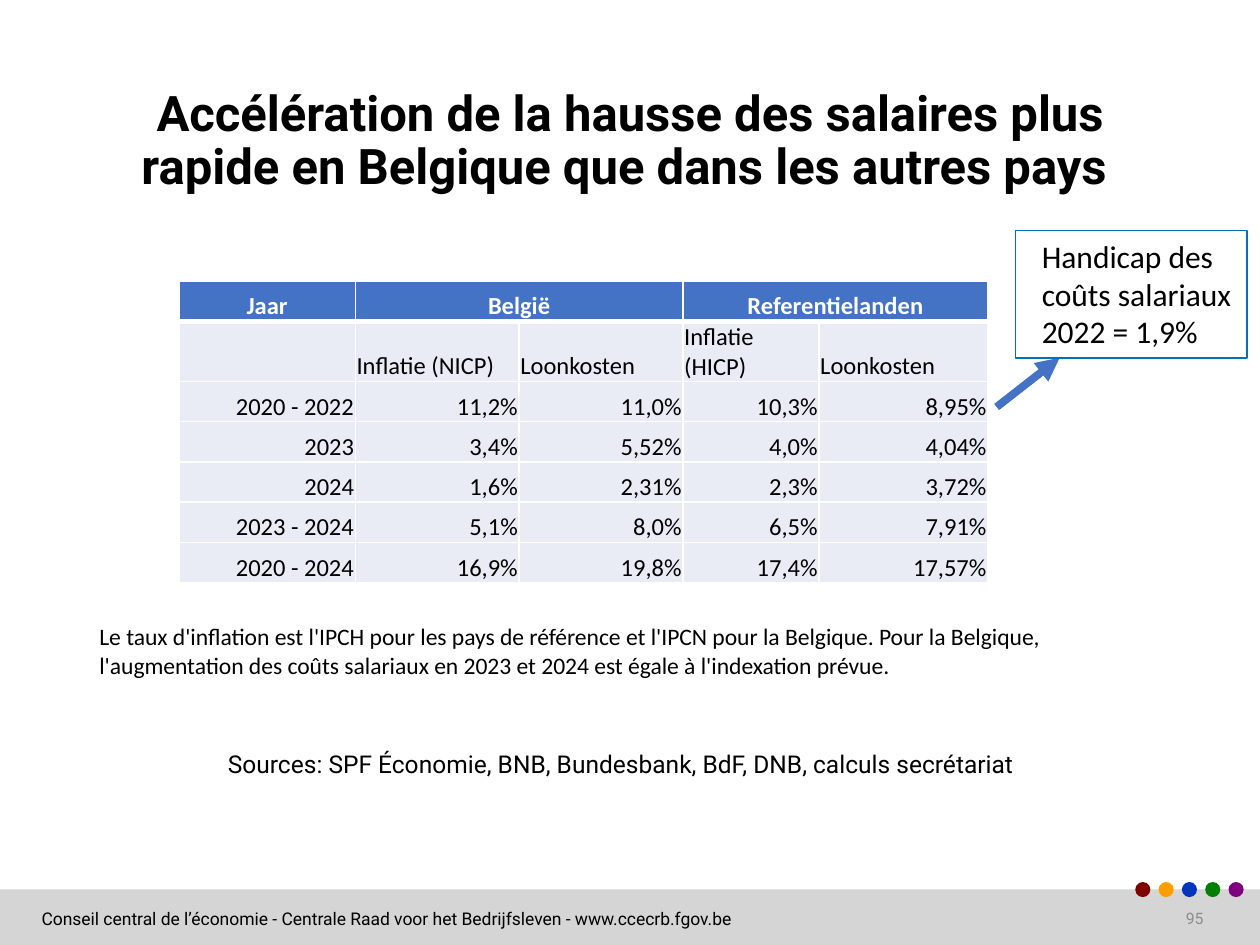
from lxml import etree
from pptx import Presentation
from pptx.dml.color import RGBColor
from pptx.enum.shapes import MSO_CONNECTOR, MSO_SHAPE
from pptx.enum.text import MSO_ANCHOR as ANCHOR, PP_ALIGN as ALIGN
from pptx.oxml.ns import qn
from pptx.util import Inches, Pt

BLACK = RGBColor(0x00, 0x00, 0x00)
WHITE = RGBColor(0xFF, 0xFF, 0xFF)
BLUE = RGBColor(0x44, 0x72, 0xC4)
FRAME_BLUE = RGBColor(0x00, 0x70, 0xC0)
PALE = RGBColor(0xE9, 0xEB, 0xF5)
BAND_GREY = RGBColor(0xD6, 0xD5, 0xD5)
NUMBER_GREY = RGBColor(0x8C, 0x8C, 0x8C)
DOT_COLORS = [RGBColor(0x7F, 0x00, 0x00), RGBColor(0xFF, 0x9D, 0x00),
              RGBColor(0x00, 0x35, 0xBC), RGBColor(0x00, 0x7F, 0x00),
              RGBColor(0x7F, 0x00, 0x7F)]

COL_WIDTHS = [1.4, 1.3, 1.3, 1.08, 1.34]
ROW_HEIGHT = 0.32
ROWS = [
    ["Jaar", "België", "", "Referentielanden", ""],
    ["", "Inflatie (NICP)", "Loonkosten", "Inflatie (HICP)", "Loonkosten"],
    ["2020 - 2022", "11,2%", "11,0%", "10,3%", "8,95%"],
    ["2023", "3,4%", "5,52%", "4,0%", "4,04%"],
    ["2024", "1,6%", "2,31%", "2,3%", "3,72%"],
    ["2023 - 2024", "5,1%", "8,0%", "6,5%", "7,91%"],
    ["2020 - 2024", "16,9%", "19,8%", "17,4%", "17,57%"],
]


def write(tf, text, size=14, font="Calibri", color=BLACK, bold=False,
          align=ALIGN.LEFT, spacing=None):
    p = tf.paragraphs[0]
    p.alignment = align
    if spacing:
        p.line_spacing = spacing
    p.font.size = Pt(size)
    if text:
        r = p.add_run()
        r.text = text
        r.font.size, r.font.name, r.font.bold = Pt(size), font, bold
        r.font.color.rgb = color


def add_text(s, box, text, anchor=ANCHOR.TOP, wrap=True, inset=None, **fmt):
    tf = s.shapes.add_textbox(*map(Inches, box)).text_frame
    tf.word_wrap = wrap
    tf.vertical_anchor = anchor
    if inset is not None:
        tf.margin_left = tf.margin_right = Inches(inset)
        tf.margin_top = tf.margin_bottom = Inches(inset)
    write(tf, text, **fmt)


def add_shape(s, kind, box, fill=None, line=None):
    sp = s.shapes.add_shape(kind, *map(Inches, box))
    sp.shadow.inherit = False
    if fill is None:
        sp.fill.background()
    else:
        sp.fill.solid()
        sp.fill.fore_color.rgb = fill
    if line is None:
        sp.line.fill.background()
    else:
        sp.line.color.rgb = line
        sp.line.width = Pt(1)


def add_arrow(s, start, end):
    c = s.shapes.add_connector(MSO_CONNECTOR.STRAIGHT,
                               *map(Inches, start + end))
    c.line.color.rgb = BLUE
    c.line.width = Pt(4.5)
    etree.SubElement(c.line._get_or_add_ln(), qn("a:tailEnd"), type="triangle")
    etree.SubElement(c._element.spPr, qn("a:effectLst"))


def set_borders(cell, widths):
    """Draw white borders; widths maps a side (L, R, T, B) to points."""
    tc_pr = cell._tc.get_or_add_tcPr()
    for i, (side, width) in enumerate(widths.items()):
        ln = etree.Element(qn(f"a:ln{side}"), w=str(Pt(width)))
        fill = etree.SubElement(ln, qn("a:solidFill"))
        etree.SubElement(fill, qn("a:srgbClr"), val=str(WHITE))
        tc_pr.insert(i, ln)


def format_cell(cell, row, text):
    header = row == 0
    cell.fill.solid()
    cell.fill.fore_color.rgb = BLUE if header else PALE
    cell.vertical_anchor = ANCHOR.BOTTOM
    cell.margin_left = cell.margin_right = cell.margin_top = Inches(0.01)
    cell.margin_bottom = 0
    align = (ALIGN.CENTER, ALIGN.LEFT)[row] if row < 2 else ALIGN.RIGHT
    write(cell.text_frame, text, color=WHITE if header else BLACK,
          bold=header, align=align)
    set_borders(cell, {"L": 1, "R": 1, "T": 3 if row == 1 else 1,
                       "B": 3 if header else 1})


def add_wage_table(s, left, top):
    frame = s.shapes.add_table(len(ROWS), len(COL_WIDTHS), Inches(left),
                               Inches(top), Inches(sum(COL_WIDTHS)),
                               Inches(ROW_HEIGHT * len(ROWS)))
    table = frame.table
    for col, width in zip(table.columns, COL_WIDTHS):
        col.width = Inches(width)
    for r, texts in enumerate(ROWS):
        table.rows[r].height = Inches(ROW_HEIGHT)
        for c, text in enumerate(texts):
            format_cell(table.cell(r, c), r, text)
    # Each country group spans two columns
    for c in (1, 3):
        table.cell(0, c).merge(table.cell(0, c + 1))


def add_footer(s):
    add_shape(s, MSO_SHAPE.RECTANGLE, (0, 7.06, 10, 0.44), fill=BAND_GREY)
    for i, color in enumerate(DOT_COLORS):
        add_shape(s, MSO_SHAPE.OVAL, (9.01 + 0.185 * i, 7, 0.12, 0.12),
                  fill=color)
    add_text(s, (0.27, 7.15, 5.73, 0.28),
             "Conseil central de l’économie - Centrale Raad voor het "
             "Bedrijfsleven - www.ccecrb.fgov.be",
             wrap=False, inset=0.06, size=10, font="Roboto")
    add_text(s, (8.49, 7.14, 1.16, 0.29), "95", anchor=ANCHOR.MIDDLE, size=9,
             font="Roboto", color=NUMBER_GREY, align=ALIGN.RIGHT)


def main():
    prs = Presentation()
    prs.slide_width, prs.slide_height = Inches(10), Inches(7.5)
    s = prs.slides.add_slide(prs.slide_layouts[6])

    add_footer(s)

    # Title
    add_text(s, (0.69, 0.4, 8.62, 1.45),
             "Accélération de la hausse des salaires plus rapide en Belgique "
             "que dans les autres pays ",
             anchor=ANCHOR.MIDDLE, size=28, font="Roboto", bold=True,
             align=ALIGN.CENTER, spacing=0.9)

    # Table and its note
    add_wage_table(s, 1.42, 2.23)
    add_text(s, (0.69, 4.89, 8.62, 0.56),
             "Le taux d'inflation est l'IPCH pour les pays de référence et "
             "l'IPCN pour la Belgique. Pour la Belgique, l'augmentation des "
             "coûts salariaux en 2023 et 2024 est égale à l'indexation prévue.",
             size=13.5)

    # Callout with arrow
    add_text(s, (8.17, 1.83, 1.73, 1.01),
             "Handicap des coûts salariaux 2022 = 1,9%", size=18)
    add_arrow(s, (7.91, 3.23), (8.41, 2.84))
    add_shape(s, MSO_SHAPE.RECTANGLE, (8.06, 1.83, 1.84, 1.01),
              line=FRAME_BLUE)

    # Sources
    add_text(s, (1.71, 5.88, 6.58, 0.4),
             "Sources: SPF Économie, BNB, Bundesbank, BdF, DNB, "
             "calculs secrétariat",
             anchor=ANCHOR.MIDDLE, font="Roboto", spacing=0.9)

    prs.save("out.pptx")


if __name__ == "__main__":
    main()
